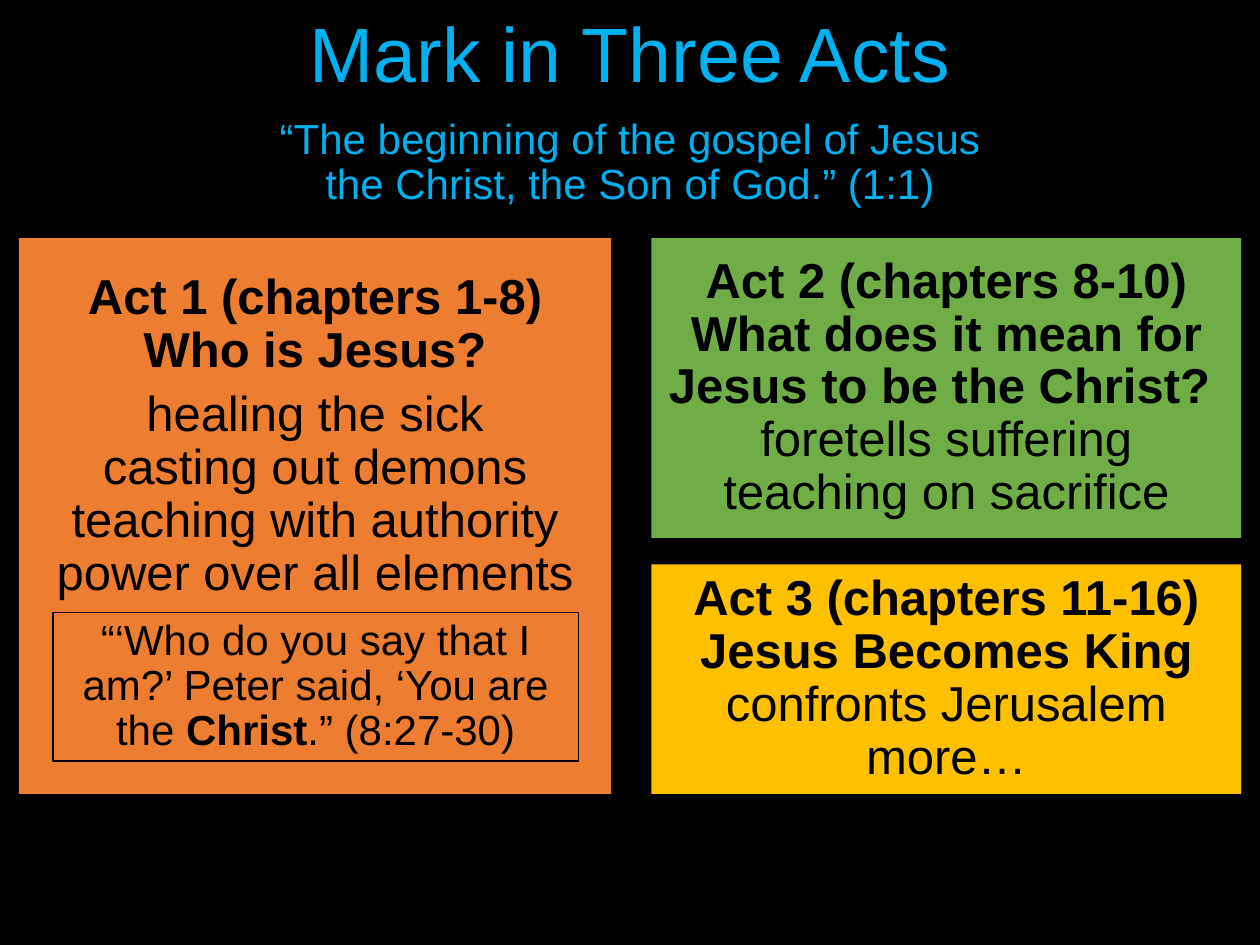
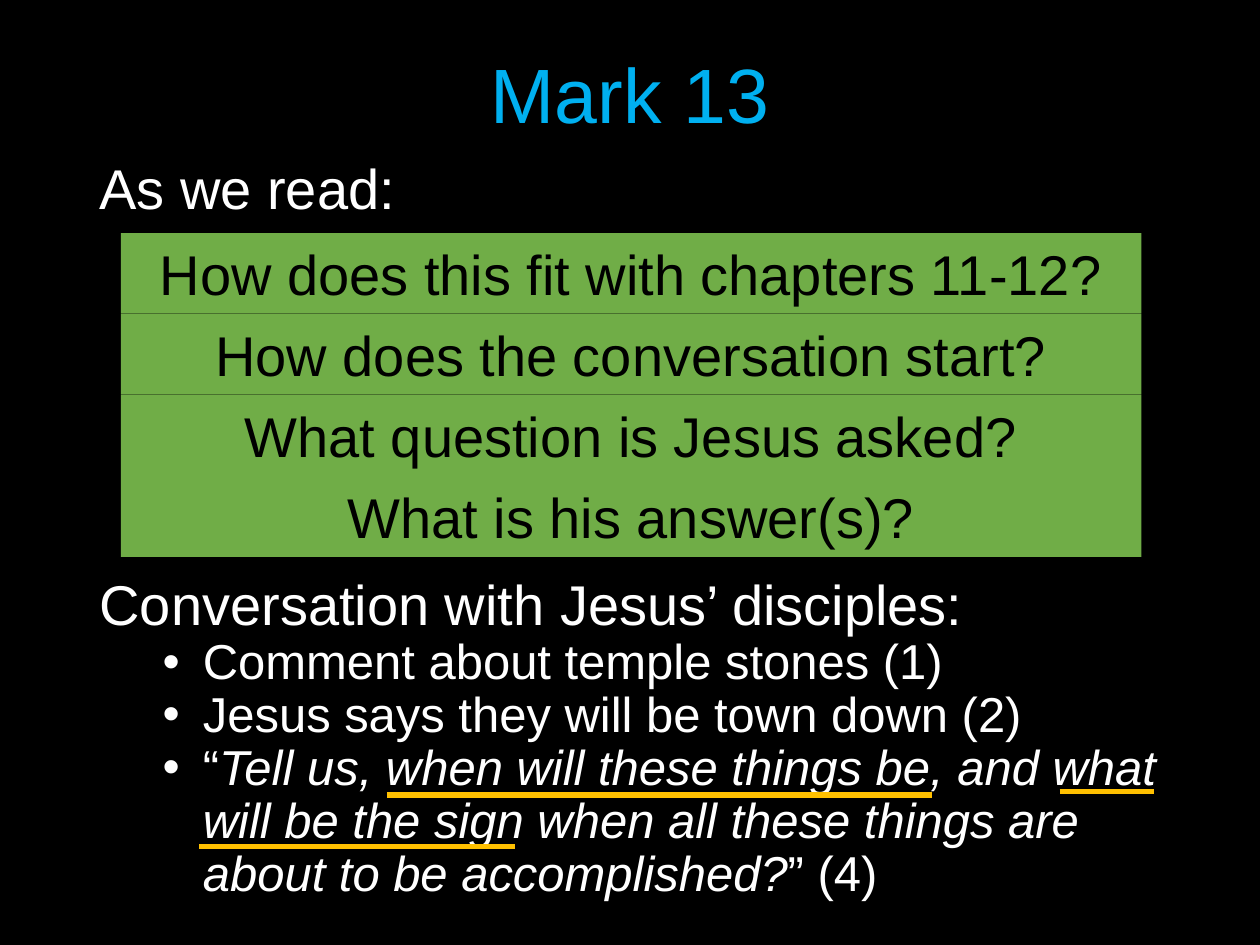
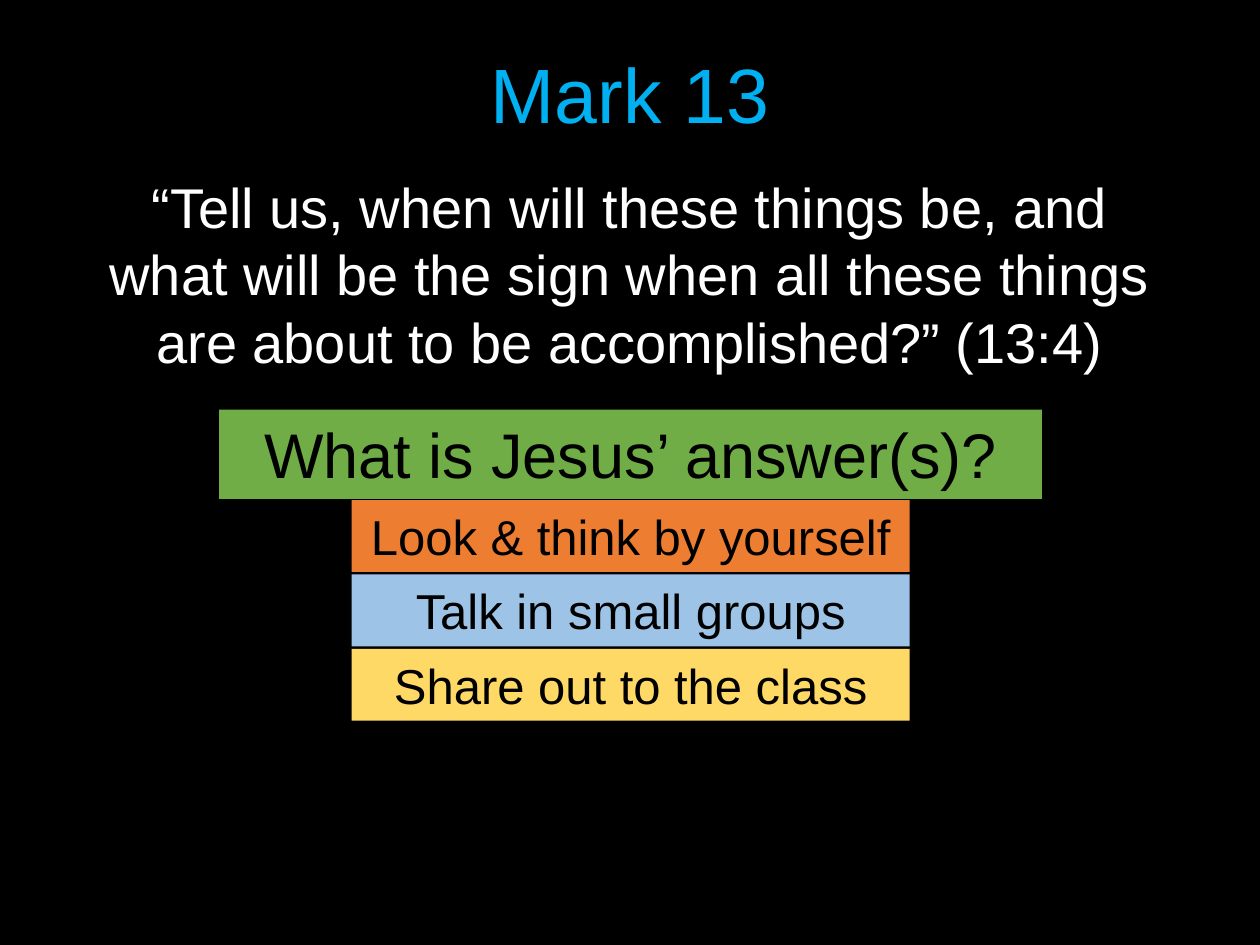
from lxml import etree
from pptx import Presentation
from pptx.dml.color import RGBColor
from pptx.enum.shapes import MSO_CONNECTOR, MSO_SHAPE
from pptx.enum.text import MSO_ANCHOR, MSO_AUTO_SIZE, PP_ALIGN
from pptx.oxml.ns import qn
from pptx.util import Inches, Pt

RECTANGLE = MSO_SHAPE.RECTANGLE
STRAIGHT = MSO_CONNECTOR.STRAIGHT
TOP, MIDDLE = MSO_ANCHOR.TOP, MSO_ANCHOR.MIDDLE
LEFT, CENTER = PP_ALIGN.LEFT, PP_ALIGN.CENTER
FIXED_SIZE = MSO_AUTO_SIZE.NONE

FONT = "Arial"
BLACK, WHITE, SKY = "000000", "FFFFFF", "00B0F0"
ORANGE, GREEN, GOLD = "ED7D31", "70AD47", "FFC000"
PALE_BLUE, PALE_GOLD = "9DC3E6", "FFD966"
TITLE_SIZE = 44
TIGHT = 0.9
CONTENT_LEFT, CONTENT_WIDTH = 0.69, 8.62
TITLE_BOX = (CONTENT_LEFT, 0.4, CONTENT_WIDTH, 0.77)


def color(hex_string):
    return RGBColor.from_string(hex_string)


def place(shape, box):
    shape.left, shape.top, shape.width, shape.height = map(Inches, box)


def set_bullet(paragraph, character=None, left=0, hanging=0):
    properties = paragraph._p.get_or_add_pPr()
    properties.set("marL", str(Inches(left)))
    properties.set("indent", str(-Inches(hanging)))
    if character:
        etree.SubElement(properties, qn("a:buChar")).set("char", character)
    else:
        etree.SubElement(properties, qn("a:buNone"))


def write(shape, paragraphs, size, text_color, align=CENTER, spacing=1.0, anchor=TOP):
    """Each paragraph is a list of (text, style) runs; style holds b and/or i."""
    frame = shape.text_frame
    frame.word_wrap = True
    frame.auto_size = FIXED_SIZE
    frame.vertical_anchor = anchor
    for index, pieces in enumerate(paragraphs):
        paragraph = frame.paragraphs[0] if index == 0 else frame.add_paragraph()
        set_bullet(paragraph)
        paragraph.alignment = align
        paragraph.line_spacing = spacing
        paragraph.space_before = paragraph.space_after = Pt(0)
        for text, style in pieces:
            run = paragraph.add_run()
            run.text = text
            run.font.name = FONT
            run.font.size = Pt(size)
            run.font.bold = "b" in style
            run.font.italic = "i" in style
            run.font.color.rgb = color(text_color)
    return frame


def plain(*lines):
    return [[(line, "")] for line in lines]


def add_text(slide, box, text, size, text_color, **options):
    shape = slide.shapes.add_textbox(*map(Inches, box))
    write(shape, plain(text), size, text_color, **options)


def add_panel(slide, box, fill, paragraphs, size, line=None, **options):
    shape = slide.shapes.add_shape(RECTANGLE, *map(Inches, box))
    shape.shadow.inherit = False
    if fill:
        shape.fill.solid()
        shape.fill.fore_color.rgb = color(fill)
    else:
        shape.fill.background()
    if line:
        shape.line.color.rgb = color(line)
        shape.line.width = Pt(0.75)
    else:
        shape.line.fill.background()
    write(shape, paragraphs, size, BLACK, **options)


def add_stack(slide, box, pitch, size, rows):
    left, top, width, height = box
    for index, (text, fill) in enumerate(rows):
        add_panel(slide, (left, top + index * pitch, width, height), fill, plain(text), size)


def add_underline(slide, left, right, height):
    line = slide.shapes.add_connector(
        STRAIGHT, Inches(left), Inches(height), Inches(right), Inches(height))
    line.line.color.rgb = color(GOLD)
    line.line.width = Pt(3)
    etree.SubElement(line._element.spPr, qn("a:effectLst"))


def add_slide(presentation, title, title_box=TITLE_BOX, title_size=TITLE_SIZE):
    slide = presentation.slides.add_slide(presentation.slide_layouts[1])
    place(slide.shapes.title, title_box)
    write(slide.shapes.title, plain(title), title_size, SKY, spacing=TIGHT, anchor=MIDDLE)
    return slide, slide.placeholders[1]


# Slide 1: the three acts
def act(heading, *events):
    return [[(heading, "b")]] + plain(*events)


def add_first_act(slide, body, box):
    left, top, width, height = box
    place(body, box)
    body.fill.solid()
    body.fill.fore_color.rgb = color(ORANGE)
    frame = write(body, act("Act 1 (chapters 1-8) Who is Jesus?", "healing the sick",
                            "casting out demons", "teaching with authority",
                            "power over all elements"),
                  28, BLACK, spacing=TIGHT, anchor=MIDDLE)
    frame.margin_bottom = Inches(1.31)  # room for the framed quotation
    frame.paragraphs[1].space_before = Pt(6)
    quotation = [[("“‘Who do you say that I am?’ Peter said, ‘You are the ", ""),
                  ("Christ", "b"), (".” (8:27-30)", "")]]
    add_panel(slide, (left + 0.27, top + 2.97, width - 0.53, 1.18), None, quotation, 24,
              line=BLACK, spacing=TIGHT, anchor=MIDDLE)


def build_acts(presentation):
    slide, body = add_slide(
        presentation, "“The beginning of the gospel of Jesus the Christ, the Son of God.” (1:1)",
        (2.01, 0.9, 5.98, 0.79), 24)
    add_text(slide, (CONTENT_LEFT, 0.07, CONTENT_WIDTH, 0.77), "Mark in Three Acts",
             TITLE_SIZE, SKY, spacing=TIGHT, anchor=MIDDLE)
    add_first_act(slide, body, (0.15, 1.89, 4.7, 4.41))
    later_acts = [
        (1.89, 2.38, GREEN, act("Act 2 (chapters 8-10) What does it mean for Jesus to be the Christ? ",
                                "foretells suffering", "teaching on sacrifice")),
        (4.48, 1.82, GOLD, act("Act 3 (chapters 11-16) Jesus Becomes King",
                               "confronts Jerusalem", "more…")),
    ]
    for top, height, fill, paragraphs in later_acts:
        add_panel(slide, (5.17, top, 4.68, height), fill, paragraphs, 28,
                  spacing=TIGHT, anchor=MIDDLE)


# Slide 2: reading questions and the conversation
def add_conversation(body, box):
    place(body, box)
    bullets = plain("Comment about temple stones (1)", "Jesus says they will be town down (2)")
    bullets.append([("“", ""),
                    ("Tell us, when will these things be, and what will be the sign "
                     "when all these things are about to be accomplished?", "i"),
                    ("” (4)", "")])
    frame = write(body, plain("Conversation with Jesus’ disciples:") + bullets,
                  32, WHITE, align=LEFT, spacing=TIGHT)
    for paragraph in frame.paragraphs[1:]:
        properties = paragraph._p.pPr
        properties.remove(properties.find(qn("a:buNone")))
        paragraph.level = 1
        set_bullet(paragraph, "•", 0.82, 0.32)
        for run in paragraph.runs:
            run.font.size = Pt(28)


def build_reading(presentation):
    slide, body = add_slide(presentation, "Mark 13")
    add_conversation(body, (CONTENT_LEFT, 4.53, CONTENT_WIDTH, 2.77))
    add_text(slide, (CONTENT_LEFT, 1.17, CONTENT_WIDTH, 0.64), "As we read:", 32, WHITE, align=LEFT)
    questions = ["How does this fit with chapters 11-12?", "How does the conversation start?",
                 "What question is Jesus asked?", "What is his answer(s)?"]
    add_stack(slide, (0.96, 1.85, 8.1, 0.64), 1.93 / 3, 32,
              [(question, GREEN) for question in questions])
    for left, right, height in [(3.07, 7.4, 6.31), (1.58, 4.09, 6.72), (8.41, 9.16, 6.28)]:
        add_underline(slide, left, right, height)


# Slide 3: discussion steps
def build_discussion(presentation):
    slide, body = add_slide(presentation, "Mark 13")
    place(body, (CONTENT_LEFT, 1.32, CONTENT_WIDTH, 1.8))
    write(body, plain("“Tell us, when will these things be, and what will be the sign "
                      "when all these things are about to be accomplished?” (13:4)"), 32, WHITE)
    add_panel(slide, (1.74, 3.25, 6.53, 0.71), GREEN, plain("What is Jesus’ answer(s)?"), 36)
    add_stack(slide, (2.79, 3.97, 4.43, 0.57), 0.59, 28,
              [("Look & think by yourself", ORANGE), ("Talk in small groups", PALE_BLUE),
               ("Share out to the class", PALE_GOLD)])


def main():
    presentation = Presentation()
    presentation.slide_width, presentation.slide_height = Inches(10), Inches(7.5)
    background = presentation.slide_master.background.fill
    background.solid()
    background.fore_color.rgb = color(BLACK)
    build_acts(presentation)
    build_reading(presentation)
    build_discussion(presentation)
    presentation.save("out.pptx")


if __name__ == "__main__":
    main()
